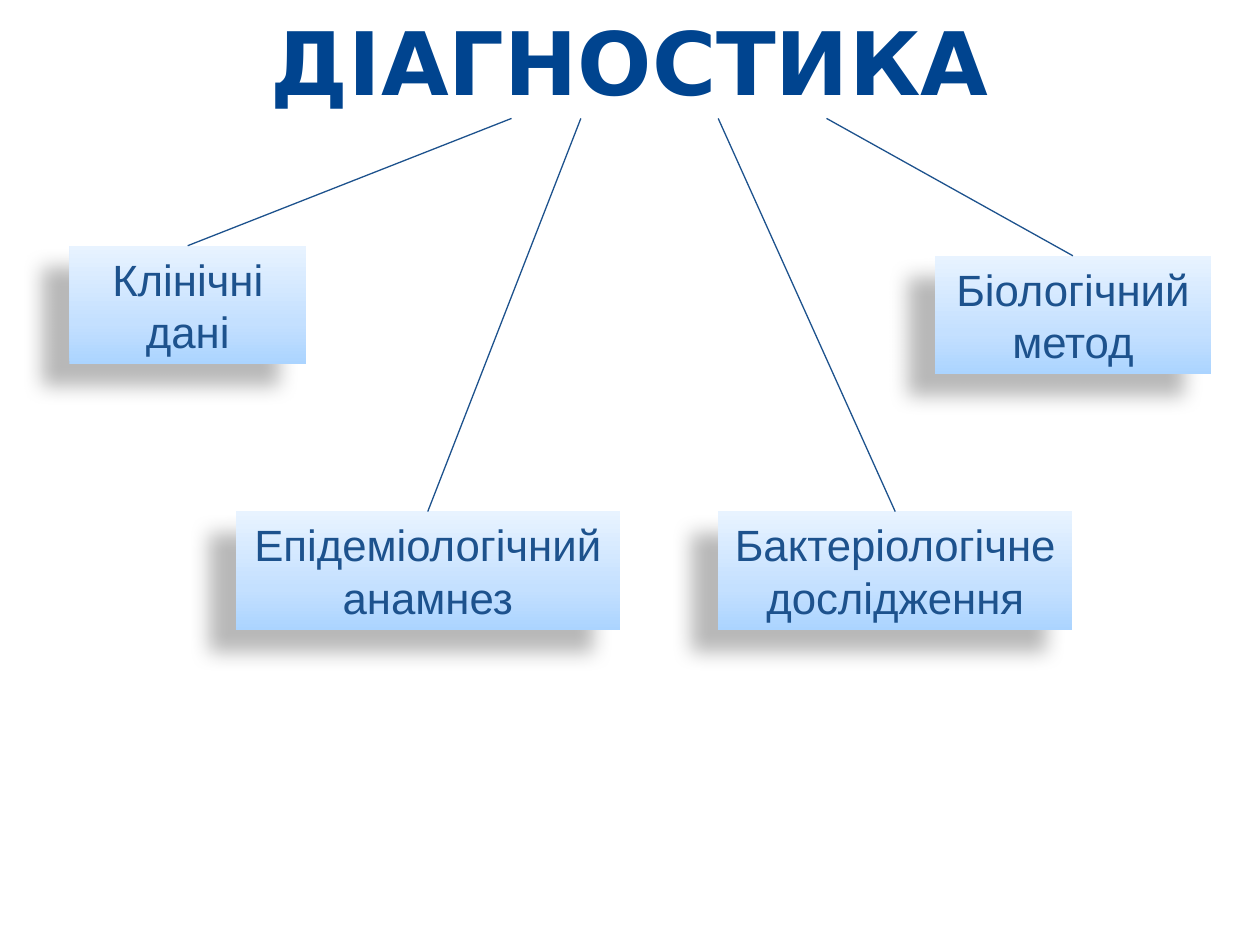
from copy import deepcopy
from dataclasses import dataclass

from lxml import etree
from pptx import Presentation
from pptx.dml.color import RGBColor as RGB
from pptx.enum.shapes import MSO_CONNECTOR as CONN, MSO_SHAPE as SHAPE
from pptx.enum.text import MSO_ANCHOR as ANCHOR, MSO_AUTO_SIZE as AUTO, PP_ALIGN as ALIGN
from pptx.oxml import parse_xml
from pptx.oxml.ns import nsdecls, qn
from pptx.util import Inches, Pt


@dataclass(frozen=True)
class Theme:
    title: RGB = RGB.from_string("00448F")
    ink: RGB = RGB.from_string("1D528D")
    stops: tuple = ((0, "ABD4FF"), (0.35, "C4E0FF"), (1, "E8F3FF"))
    title_font: str = "DejaVu Sans"
    body_font: str = "Arial"
    title_size: int = 50
    body_size: int = 25
    line_width: float = 0.75


THEME = Theme()
BOX_H = 0.94
TITLE_BOX = (0.5, 0.17, 9, 0.62)
LINE_TOP = 0.94

# label, left, top, width of the box, and x where its line leaves the title
METHODS = [
    ("Клінічні дані", 0.55, 1.95, 1.88, 4.06),
    ("Епідеміологічний анамнез", 1.87, 4.06, 3.05, 4.61),
    ("Бактеріологічне дослідження", 5.7, 4.06, 2.81, 5.7),
    ("Біологічний метод", 7.42, 2.03, 2.19, 6.56),
]


def set_text(sp, text, color, **font):
    tf = sp.text_frame
    for name, value in dict(word_wrap=True, auto_size=AUTO.NONE,
                            vertical_anchor=ANCHOR.MIDDLE).items():
        setattr(tf, name, value)
    p = tf.paragraphs[0]
    p.alignment = ALIGN.CENTER
    r = p.add_run()
    r.text = text
    r.font.color.rgb = color
    for name, value in font.items():
        setattr(r.font, name, value)


def fill_gradient(sp):
    sp.fill.gradient()
    sp.fill.gradient_angle = 90
    # The default gradient has two stops; add the third
    stops = sp._element.spPr.find(".//" + qn("a:gsLst"))
    stops.append(deepcopy(stops[-1]))
    for stop, (position, color) in zip(sp.fill.gradient_stops, THEME.stops):
        stop.position = position
        stop.color.rgb = RGB.from_string(color)


def add_shadow(sp):
    sp.shadow.inherit = False
    effects = sp._element.spPr.find(qn("a:effectLst"))
    effects.append(parse_xml(
        f'<a:outerShdw {nsdecls("a")} blurRad="{Pt(11.8)}" dist="{Pt(19.7)}" '
        f'dir="{141 * 60000}" algn="ctr" rotWithShape="0">'
        '<a:srgbClr val="000000"><a:alpha val="28000"/></a:srgbClr></a:outerShdw>'))


def add_title(slide, box):
    sp = slide.shapes.title
    for name, value in zip(("left", "top", "width", "height"), box):
        setattr(sp, name, Inches(value))
    set_text(sp, "ДІАГНОСТИКА", THEME.title, name=THEME.title_font,
             size=Pt(THEME.title_size), bold=True)


def add_method(slide, text, box):
    sp = slide.shapes.add_shape(SHAPE.RECTANGLE, *map(Inches, box))
    fill_gradient(sp)
    sp.line.fill.background()
    add_shadow(sp)
    set_text(sp, text, THEME.ink, name=THEME.body_font, size=Pt(THEME.body_size))


def add_branch(slide, start_x, box):
    # From below the title to the middle of the box's top edge
    left, top, width, _ = box
    ends = (start_x, LINE_TOP, left + width / 2, top)
    line = slide.shapes.add_connector(CONN.STRAIGHT, *map(Inches, ends))
    line.line.color.rgb = THEME.ink
    line.line.width = Pt(THEME.line_width)
    etree.SubElement(line._element.spPr, qn("a:effectLst"))


def main():
    prs = Presentation()
    prs.slide_width, prs.slide_height = Inches(10), Inches(7.5)
    slide = prs.slides.add_slide(prs.slide_layouts[5])
    add_title(slide, TITLE_BOX)
    for text, left, top, width, _ in METHODS:
        add_method(slide, text, (left, top, width, BOX_H))
    for _, left, top, width, start_x in METHODS:
        add_branch(slide, start_x, (left, top, width, BOX_H))
    prs.save("out.pptx")


if __name__ == "__main__":
    main()
